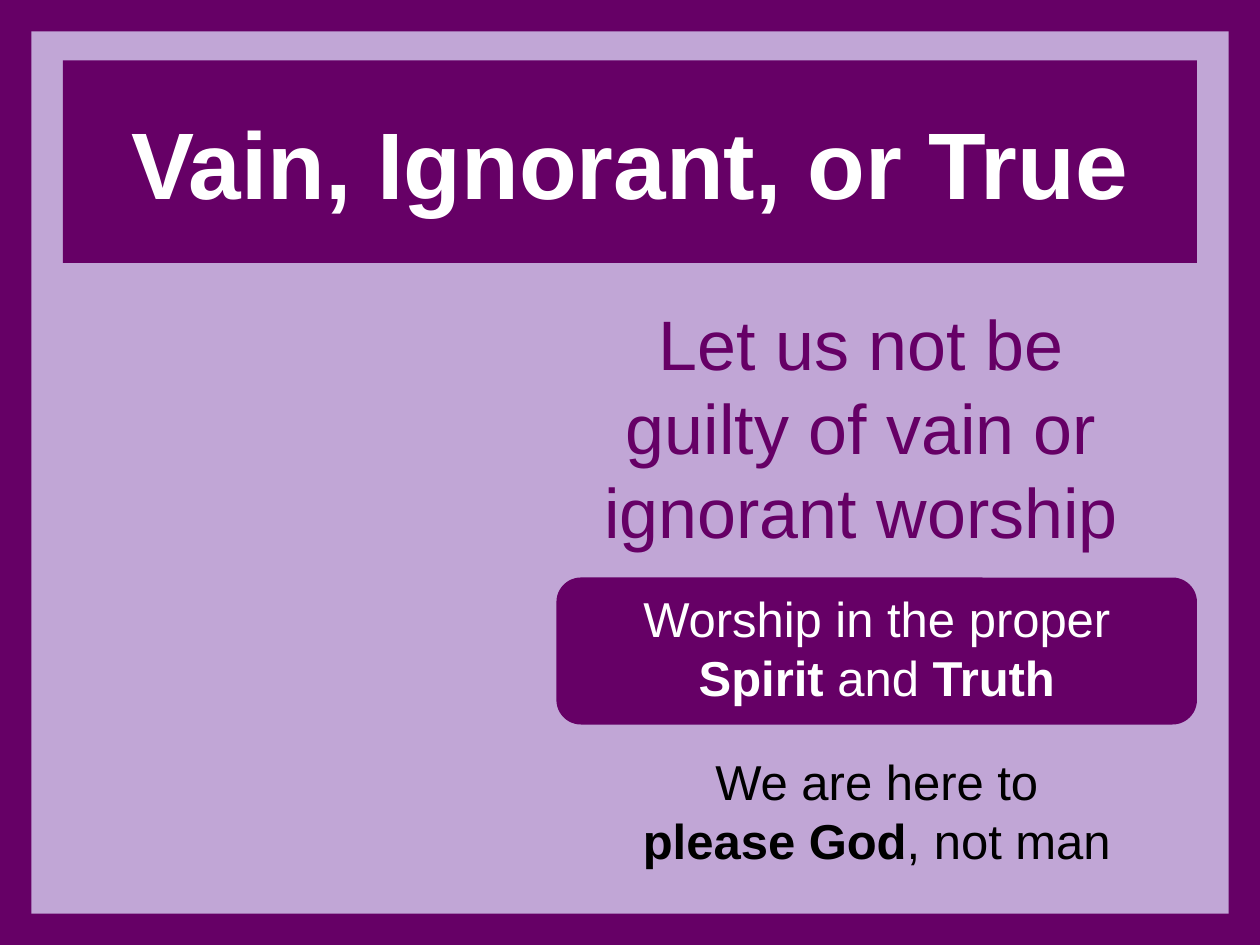
import dataclasses
import typing

import pptx
import pptx.dml.color
import pptx.enum.shapes
import pptx.enum.text
import pptx.util

CELL = 1 / 12  # inches; the slide is 120 columns by 90 rows
COLS, ROWS, EDGE = 120, 90, 3
PLUM, LILAC, WHITE, BLACK = "660066", "C1A6D6", "FFFFFF", "000000"
KIND = pptx.enum.shapes.MSO_SHAPE
ANCHOR = pptx.enum.text.MSO_ANCHOR


@dataclasses.dataclass
class Area:
    """A place on the grid, in columns and rows."""
    col: float
    row: float
    wide: float
    high: float

    def place(self) -> list[int]:
        return [pptx.util.Inches(n * CELL)
                for n in (self.col, self.row, self.wide, self.high)]


class Part(typing.NamedTuple):
    text: str
    bold: bool = False


Lines = list[list[Part]]


def paint(fill, color: str) -> None:
    fill.solid()
    fill.fore_color.rgb = pptx.dml.color.RGBColor.from_string(color)


def block(slide, area: Area, kind=KIND.RECTANGLE):
    shape = slide.shapes.add_shape(kind, *area.place())
    shape.shadow.inherit = False
    paint(shape.fill, PLUM)
    shape.line.fill.background()
    return shape


def write(shape, lines: Lines, size: float, color: str,
          anchor=ANCHOR.TOP) -> None:
    """Fill a shape with centred lines of plain and bold parts."""
    frame = shape.text_frame
    frame.word_wrap = True
    frame.vertical_anchor = anchor
    for i, line in enumerate(lines):
        para = frame.add_paragraph() if i else frame.paragraphs[0]
        para.alignment = pptx.enum.text.PP_ALIGN.CENTER
        for part in line:
            run = para.add_run()
            run.text = part.text
            run.font.name = "Arial"
            run.font.size = pptx.util.Pt(size)
            run.font.bold = part.bold
            paint(run.font.fill, color)


def note(slide, area: Area, lines: Lines, size: float, color: str) -> None:
    write(slide.shapes.add_textbox(*area.place()), lines, size, color)


def main() -> None:
    deck = pptx.Presentation()
    deck.slide_width = pptx.util.Inches(COLS * CELL)
    deck.slide_height = pptx.util.Inches(ROWS * CELL)
    slide = deck.slides.add_slide(deck.slide_layouts[6])
    paint(slide.background.fill, LILAC)

    title = block(slide, Area(6, 5.75, 108, 19.3))
    write(title, [[Part("Vain, Ignorant, or True", True)]], 54, WHITE,
          anchor=ANCHOR.MIDDLE)
    note(slide, Area(54, 28, 56, 26),
         [[Part("Let us not be guilty of vain or ignorant worship")]], 40, PLUM)

    for col in (0, COLS - EDGE):
        block(slide, Area(col, 0, EDGE, ROWS))
    for row in (0, ROWS - EDGE):
        block(slide, Area(0, row, COLS, EDGE))

    block(slide, Area(53, 55, 61, 14), KIND.ROUNDED_RECTANGLE)
    note(slide, Area(55, 55.5, 57, 12.5),
         [[Part("Worship in the proper")],
          [Part("Spirit", True), Part(" and "), Part("Truth", True)]],
         28, WHITE)
    note(slide, Area(52, 71, 63, 12.5),
         [[Part("We are here to")],
          [Part("please God", True), Part(", not man")]],
         28, BLACK)
    deck.save("out.pptx")


if __name__ == "__main__":
    main()
